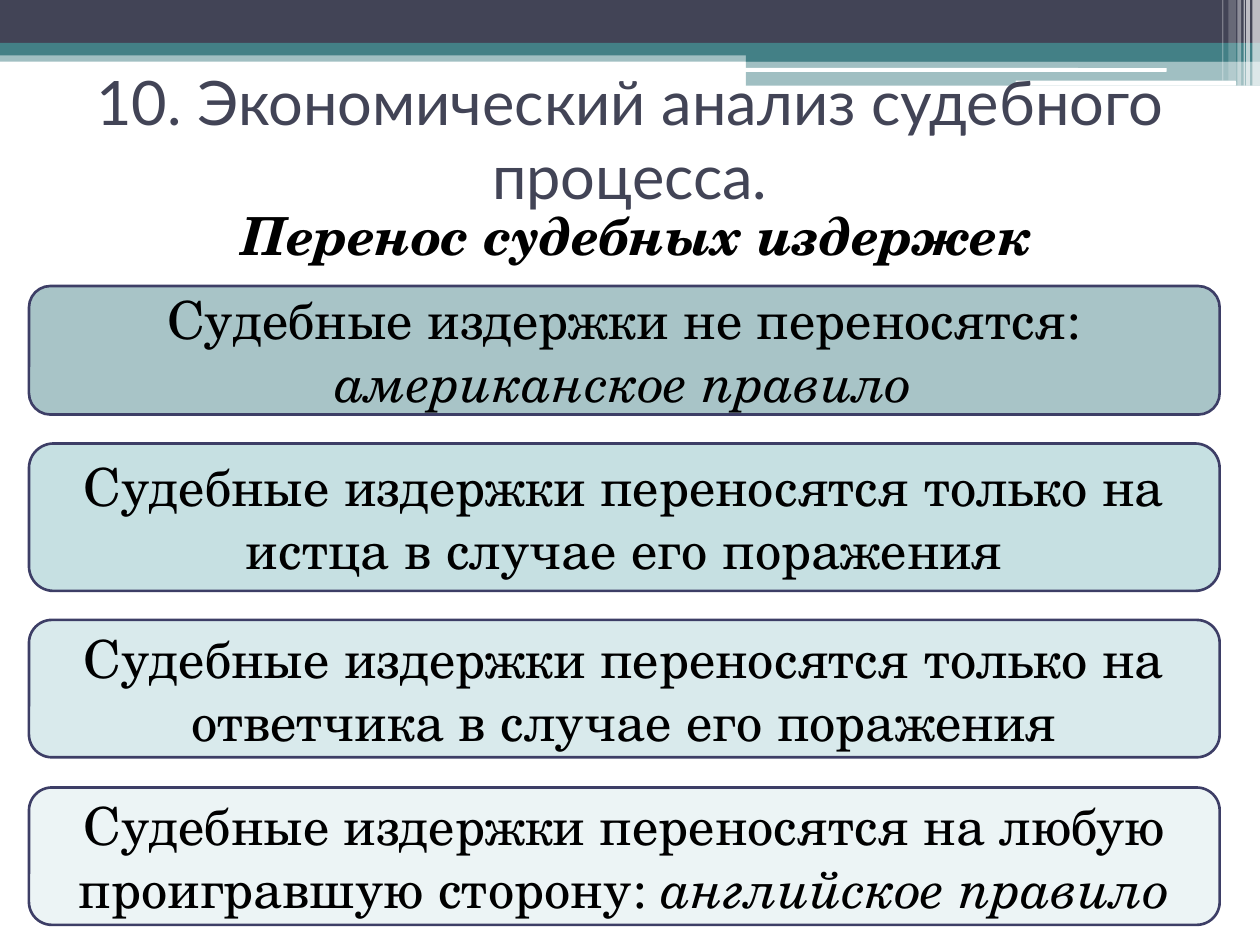
from dataclasses import dataclass

from lxml.etree import SubElement
from pptx import Presentation
from pptx.dml.color import RGBColor
from pptx.enum.shapes import MSO_SHAPE as Shape
from pptx.enum.text import MSO_ANCHOR as Anchor, PP_ALIGN as Align
from pptx.oxml.ns import qn
from pptx.util import Pt

PX = 9144
SERIF, SANS = "TeX Gyre Schola", "Lato"
DARK, TEAL, WHITE, BLACK, OUTLINE = "424456", "438086", "FFFFFF", "000000", "3D3E66"
RULE_LEFT, RULE_WIDTH, RULE_ALPHA = 23, 945, 46


@dataclass
class Stripe:
    left: int
    top: int
    width: int
    height: int
    color: str
    alpha: int = 100
    kind: Shape = Shape.RECTANGLE


@dataclass
class Rule:
    top: int
    height: int
    color: str
    text: str
    emphasis: str = ""


STRIPES = [
    Stripe(0, 40, 1000, 9, TEAL, 50),
    Stripe(0, 0, 1000, 34, DARK),
    Stripe(0, 34, 1000, 10, TEAL),
    Stripe(592, 39, 408, 10, TEAL),
    Stripe(592, 48, 408, 20, TEAL, 50),
    Stripe(591, 54, 335, 3, WHITE, kind=Shape.ROUNDED_RECTANGLE),
    Stripe(806, 64, 175, 4, WHITE, kind=Shape.ROUNDED_RECTANGLE),
    Stripe(994, 0, 6, 68, WHITE, 65),
    Stripe(989, 0, 3, 68, WHITE, 65),
    Stripe(987, 0, 1, 68, WHITE, 60),
    Stripe(982, 0, 3, 68, WHITE, 40),
    Stripe(975, 0, 6, 64, WHITE, 20),
    Stripe(970, 0, 1, 64, WHITE, 30),
]

RULES = [
    Rule(227, 102, TEAL, "Судебные издержки не переносятся: ", "американское правило"),
    Rule(352, 117, "83BCC1", "Судебные издержки переносятся только на истца в случае его поражения"),
    Rule(492, 109, "ADD2D6", "Судебные издержки переносятся только на ответчика в случае его поражения"),
    Rule(625, 109, "D6E9EA", "Судебные издержки переносятся на любую проигравшую сторону: ", "английское правило"),
]


def rgb(color: str) -> RGBColor:
    return RGBColor.from_string(color)


def draw_stripe(page, stripe: Stripe):
    box = page.shapes.add_shape(stripe.kind, stripe.left * PX, stripe.top * PX,
                                stripe.width * PX, stripe.height * PX)
    box.shadow.inherit = False
    box.line.fill.background()
    box.fill.solid()
    box.fill.fore_color.rgb = rgb(stripe.color)
    if stripe.alpha < 100:
        tint = box._element.spPr.find(f".//{qn('a:srgbClr')}")
        SubElement(tint, qn("a:alpha"), val=str(stripe.alpha * 1000))
    return box


def style_run(span, size: int, font: str, color: str, bold=False, italic=False) -> None:
    span.font.size = Pt(size)
    span.font.name = font
    span.font.color.rgb = rgb(color)
    span.font.bold = bold
    span.font.italic = italic


def draw_rule(page, rule: Rule) -> None:
    box = draw_stripe(page, Stripe(RULE_LEFT, rule.top, RULE_WIDTH, rule.height,
                                   rule.color, RULE_ALPHA, Shape.ROUNDED_RECTANGLE))
    box.line.color.rgb = rgb(OUTLINE)
    box.line.width = Pt(1.5)
    frame = box.text_frame
    frame.word_wrap = True
    frame.vertical_anchor = Anchor.MIDDLE
    frame.text = rule.text
    para = frame.paragraphs[0]
    para.alignment = Align.CENTER
    style_run(para.runs[0], 30, SERIF, BLACK)
    if rule.emphasis:
        span = para.add_run()
        span.text = rule.emphasis
        style_run(span, 30, SERIF, BLACK, italic=True)


def draw_heading(page, text: str, top: int, height: int, anchor: Anchor):
    box = page.shapes.add_textbox(0, top * PX, 1000 * PX, height * PX)
    frame = box.text_frame
    frame.word_wrap = True
    frame.vertical_anchor = anchor
    frame.text = text
    para = frame.paragraphs[0]
    para.alignment = Align.CENTER
    return para


def main() -> None:
    deck = Presentation()
    deck.slide_width, deck.slide_height = 1000 * PX, 750 * PX
    page = deck.slides.add_slide(deck.slide_layouts[6])

    for stripe in STRIPES:
        draw_stripe(page, stripe)

    subtitle = draw_heading(page, "Перенос судебных издержек", 156, 586, Anchor.TOP)
    subtitle.space_before = Pt(3)
    indents = subtitle._p.get_or_add_pPr()
    indents.set("marL", str(40 * PX))
    indents.set("indent", str(-28 * PX))
    style_run(subtitle.runs[0], 30, SERIF, BLACK, bold=True, italic=True)

    for rule in RULES:
        draw_rule(page, rule)

    title = draw_heading(page, "10. Экономический анализ судебного процесса.", 47, 125, Anchor.MIDDLE)
    style_run(title.runs[0], 35, SANS, DARK)

    deck.save("out.pptx")


if __name__ == "__main__":
    main()
